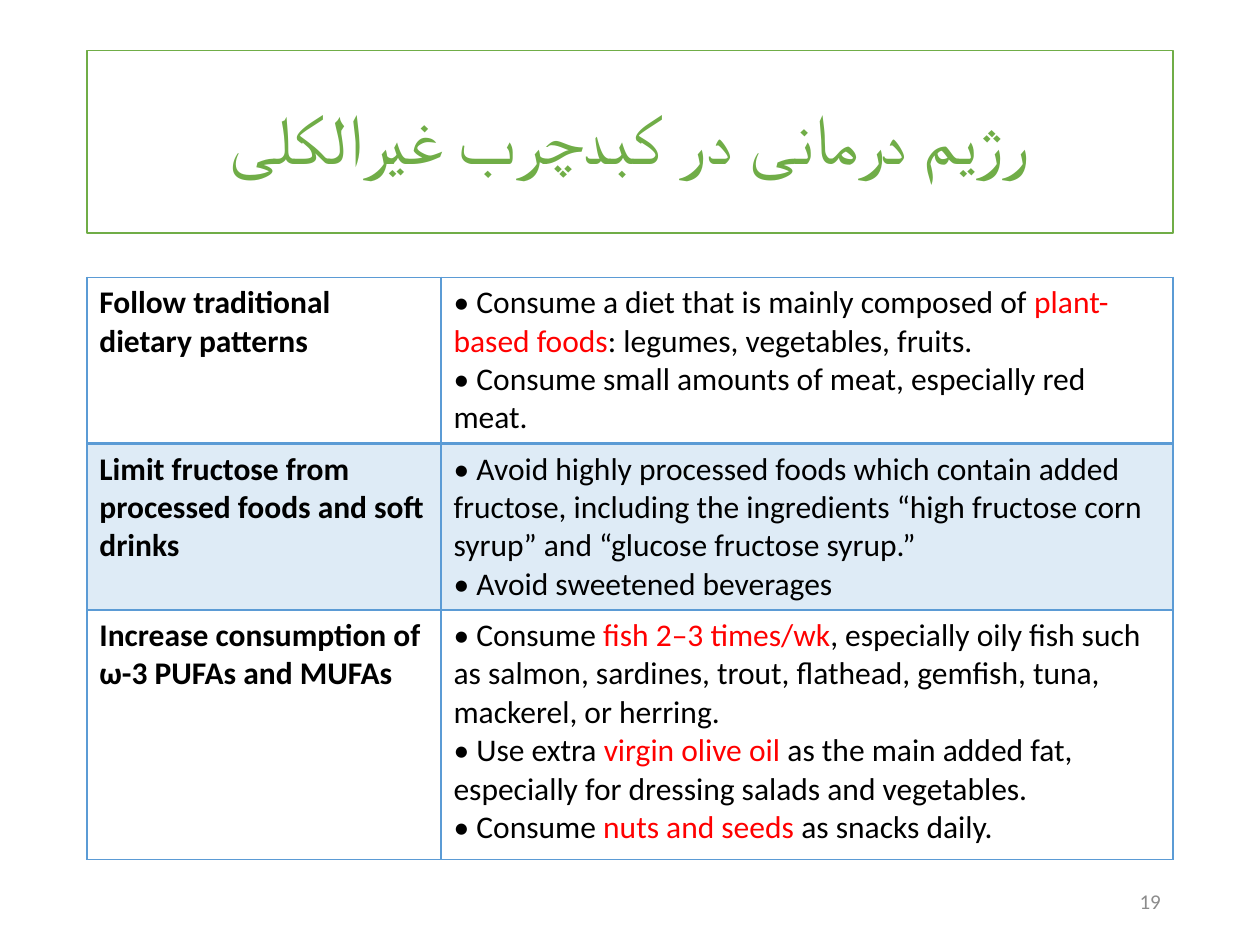
from dataclasses import dataclass

from lxml.etree import SubElement
from pptx import Presentation
from pptx.dml.color import RGBColor
from pptx.enum.shapes import MSO_SHAPE
from pptx.enum.text import MSO_ANCHOR, PP_ALIGN
from pptx.oxml.ns import qn
from pptx.util import Cm, Pt


@dataclass(frozen=True)
class Theme:
    """Colours and type sizes of the slide."""
    font: str = "Calibri"
    title_size: int = 40
    body_size: int = 18
    number_size: int = 12
    green: str = "70AD47"
    blue: str = "5B9BD5"
    red: str = "FF0000"
    black: str = "000000"
    grey: str = "8C8C8C"
    white: str = "FFFFFF"
    band_opacity: int = 20


THEME = Theme()
COLUMN_WIDTHS = (7.14, 14.76)
ROW_HEIGHTS = (3.35, 3.35, 5.03)
BANDED_ROW = 1
ADVICE = [
    ("Follow traditional dietary patterns", [
        ["• Consume a diet that is mainly composed of ", "plant-based foods",
         ": legumes, vegetables, fruits."],
        ["• Consume small amounts of meat, especially red meat."],
    ]),
    ("Limit fructose from processed foods and soft drinks", [
        ["• Avoid highly processed foods which contain added fructose, including the "
         "ingredients “high fructose corn syrup” and “glucose fructose syrup.”"],
        ["• Avoid sweetened beverages"],
    ]),
    ("Increase consumption of ω-3 PUFAs and MUFAs", [
        ["• Consume ", "fish 2–3 times/wk",
         ", especially oily fish such as salmon, sardines, trout, flathead, gemfish, "
         "tuna, mackerel, or herring."],
        ["• Use extra ", "virgin olive oil ",
         "as the main added fat, especially for dressing salads and vegetables."],
        ["• Consume ", "nuts and seeds ", "as snacks daily."],
    ]),
]


def style_font(font, size, color, bold=False):
    """Set the family, size, colour and weight of a font."""
    font.name = THEME.font
    font.size = Pt(size)
    font.bold = bold
    font.color.rgb = RGBColor.from_string(color)


def add_title(slide, box, text):
    """Add the framed right-to-left title."""
    shape = slide.shapes.add_shape(MSO_SHAPE.RECTANGLE, *map(Cm, box))
    shape.shadow.inherit = False
    shape.fill.solid()
    shape.fill.fore_color.rgb = RGBColor.from_string(THEME.white)
    shape.line.color.rgb = RGBColor.from_string(THEME.green)
    shape.line.width = Pt(1)
    frame = shape.text_frame
    frame.word_wrap = True
    frame.vertical_anchor = MSO_ANCHOR.MIDDLE
    paragraph = frame.paragraphs[0]
    paragraph.text = text
    paragraph.alignment = PP_ALIGN.CENTER
    paragraph.line_spacing = 0.9
    paragraph._p.get_or_add_pPr().set("rtl", "1")
    style_font(paragraph.font, THEME.title_size, THEME.green)


def style_cell(cell, bottom_width, banded):
    """Draw the borders of a cell and its fill."""
    properties = cell._tc.get_or_add_tcPr()
    for side, width in (("L", 1), ("R", 1), ("T", 1), ("B", bottom_width)):
        line = SubElement(properties, qn(f"a:ln{side}"), w=str(Pt(width)))
        fill = SubElement(line, qn("a:solidFill"))
        SubElement(fill, qn("a:srgbClr"), val=THEME.blue)
    if banded:
        cell.fill.solid()
        cell.fill.fore_color.rgb = RGBColor.from_string(THEME.blue)
        color = properties.find(qn("a:solidFill")).find(qn("a:srgbClr"))
        SubElement(color, qn("a:alpha"), val=str(THEME.band_opacity * 1000))
    else:
        cell.fill.background()


def write_cell(cell, paragraphs, bold=False):
    """Write paragraphs whose every second run is highlighted."""
    frame = cell.text_frame
    for index, texts in enumerate(paragraphs):
        paragraph = frame.add_paragraph() if index else frame.paragraphs[0]
        style_font(paragraph.font, THEME.body_size, THEME.black, bold)
        for position, text in enumerate(texts):
            run = paragraph.add_run()
            run.text = text
            if position % 2:
                run.font.color.rgb = RGBColor.from_string(THEME.red)


def add_advice_table(slide, left, top):
    """Add the table of dietary advice."""
    table = slide.shapes.add_table(
        len(ROW_HEIGHTS), len(COLUMN_WIDTHS), Cm(left), Cm(top),
        Cm(sum(COLUMN_WIDTHS)), Cm(sum(ROW_HEIGHTS))).table
    table.first_row = False
    table.horz_banding = False
    for column, width in zip(table.columns, COLUMN_WIDTHS):
        column.width = Cm(width)
    for index, (heading, points) in enumerate(ADVICE):
        row = table.rows[index]
        row.height = Cm(ROW_HEIGHTS[index])
        for cell in row.cells:
            style_cell(cell, 1 if index else 2, index == BANDED_ROW)
        write_cell(row.cells[0], [[heading]], bold=True)
        write_cell(row.cells[1], points)


def add_slide_number(slide, box, number):
    """Add the right-aligned slide number."""
    frame = slide.shapes.add_textbox(*map(Cm, box)).text_frame
    frame.word_wrap = True
    frame.vertical_anchor = MSO_ANCHOR.MIDDLE
    paragraph = frame.paragraphs[0]
    paragraph.text = str(number)
    paragraph.alignment = PP_ALIGN.RIGHT
    style_font(paragraph.font, THEME.number_size, THEME.grey)


def main():
    """Build and save the presentation."""
    presentation = Presentation()
    presentation.slide_width = Cm(25.4)
    presentation.slide_height = Cm(19.05)
    slide = presentation.slides.add_slide(presentation.slide_layouts[6])
    add_title(slide, (1.75, 1.02, 21.9, 3.68), "رژیم درمانی در کبدچرب غیرالکلی")
    add_advice_table(slide, 1.75, 5.59)
    add_slide_number(slide, (17.93, 17.65, 5.72, 1.02), 19)
    presentation.save("out.pptx")


if __name__ == "__main__":
    main()
